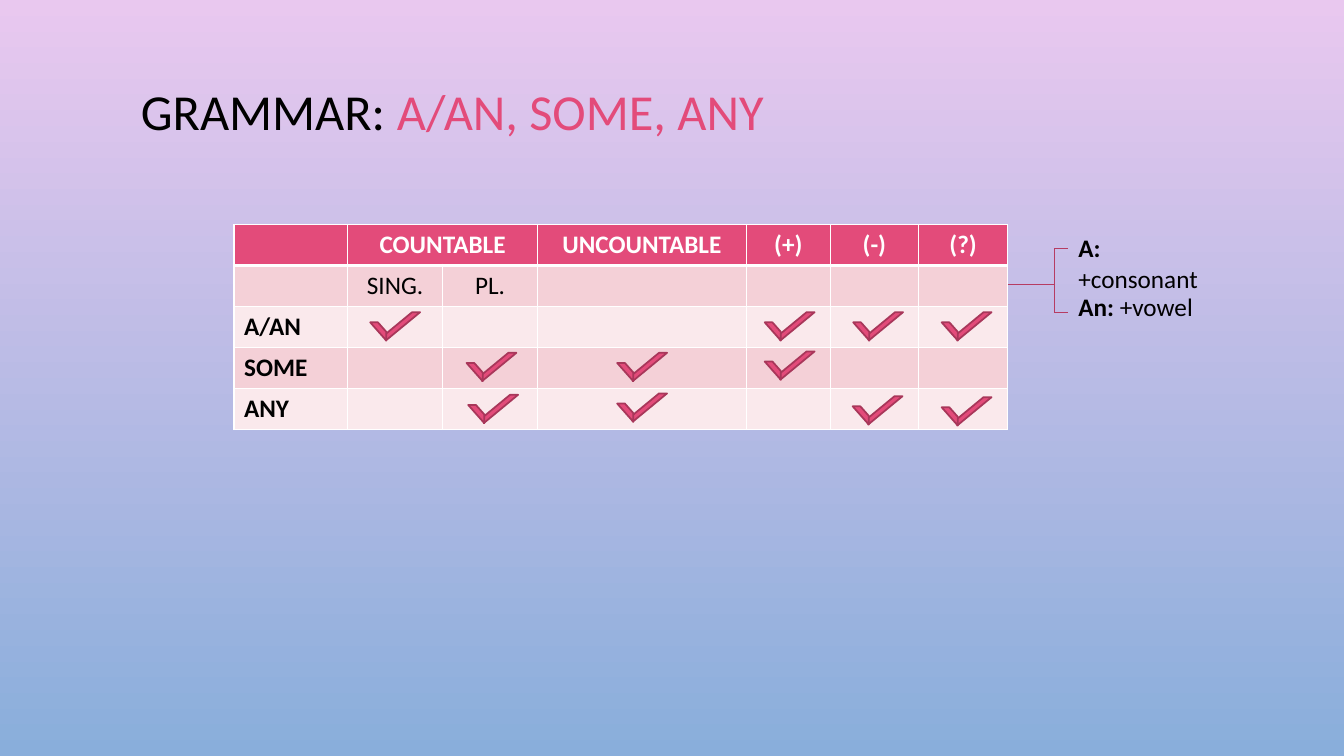
from lxml.etree import SubElement
from pptx import Presentation
from pptx.dml.color import RGBColor
from pptx.enum.shapes import MSO_CONNECTOR, MSO_SHAPE
from pptx.enum.text import PP_ALIGN
from pptx.oxml import parse_xml
from pptx.oxml.ns import nsdecls, qn
from pptx.util import Pt

PINK, DARK_PINK, BRACKET_PINK = "E34B7A", "A8375A", "B63C62"
ROSE, PALE_ROSE = "F4D0D7", "FAE9EC"
BLACK, WHITE = "000000", "FFFFFF"


def color(value):
    return RGBColor.from_string(value)


def add_run(paragraph, text, size, text_color, bold=False):
    run = paragraph.add_run()
    run.text = text
    font_format = {"name": "Calibri", "size": Pt(size), "bold": bold}
    for attribute, value in font_format.items():
        setattr(run.font, attribute, value)
    run.font.color.rgb = color(text_color)


presentation = Presentation()
presentation.slide_width, presentation.slide_height = Pt(960), Pt(540)
slide = presentation.slides.add_slide(presentation.slide_layouts[6])

# Background
background = slide.background.fill
background.gradient()
background.gradient_angle = 270
for stop, (position, stop_color) in zip(
    background.gradient_stops, [(0, "E9C8EF"), (1, "89AEDB")]
):
    stop.position = position
    stop.color.rgb = color(stop_color)

# Title
title = slide.shapes.add_textbox(Pt(93.6), Pt(58.3), Pt(818), Pt(53.3)).text_frame
title.word_wrap = True
heading = title.paragraphs[0]
heading.line_spacing = 0.9
add_run(heading, "GRAMMAR: ", 36, BLACK)
add_run(heading, "A/AN, SOME, ANY", 36, PINK)

# Grammar table
rows = [
    ["", "COUNTABLE", "", "UNCOUNTABLE", "(+)", "(-)", "(?)"],
    ["", "SING.", "PL.", "", "", "", ""],
    ["A/AN", "", "", "", "", "", ""],
    ["SOME", "", "", "", "", "", ""],
    ["ANY", "", "", "", "", "", ""],
]
column_widths = [81.2, 67.8, 67.8, 149.2, 60, 63, 63.8]
row_height = 29.25
grammar = slide.shapes.add_table(
    len(rows), len(column_widths), Pt(167.2), Pt(160.4),
    Pt(sum(column_widths)), Pt(row_height * len(rows)),
).table
grammar.first_row = grammar.horz_banding = False
for column, width in zip(grammar.columns, column_widths):
    column.width = Pt(width)
grammar.cell(0, 1).merge(grammar.cell(0, 2))

for row_index, row in enumerate(rows):
    grammar.rows[row_index].height = Pt(row_height)
    is_header = row_index == 0
    row_fill = PINK if is_header else (ROSE if row_index % 2 else PALE_ROSE)
    border_widths = {
        "L": 1, "R": 1,
        "T": 3 if row_index == 1 else 1,
        "B": 3 if is_header else 1,
    }
    for column_index, label in enumerate(row):
        cell = grammar.cell(row_index, column_index)
        cell.fill.solid()
        cell.fill.fore_color.rgb = color(row_fill)
        for order, (side, width) in enumerate(border_widths.items()):
            border = parse_xml(
                f'<a:ln{side} {nsdecls("a")} w="{Pt(width)}"><a:solidFill>'
                f'<a:srgbClr val="{WHITE}"/></a:solidFill></a:ln{side}>'
            )
            cell._tc.get_or_add_tcPr().insert(order, border)
        if label:
            paragraph = cell.text_frame.paragraphs[0]
            if column_index:
                paragraph.alignment = PP_ALIGN.CENTER
            add_run(paragraph, label, 18, WHITE if is_header else BLACK,
                    bold=row_index != 1)

# Check marks: a long stroke and a short one turned by 90 degrees
check_marks = [
    (275.6, 223), (557.4, 223), (620.6, 223), (683.8, 223),
    (344.4, 252), (452, 252), (557.4, 251),
    (345.6, 282), (452, 281), (620.2, 283), (683.8, 283.7),
]
strokes = [
    # offset x, offset y, width, height, rotation, stripe adjustment
    (0, 0, 24.5, 20.2, 0, 0.767),
    (-11.9, 8, 13, 11.5, 90, 0.524),
]
for left, top in check_marks:
    for offset_x, offset_y, width, height, rotation, thickness in strokes:
        stroke = slide.shapes.add_shape(
            MSO_SHAPE.DIAGONAL_STRIPE,
            Pt(left + offset_x), Pt(top + offset_y), Pt(width), Pt(height),
        )
        stroke.shadow.inherit = False
        stroke.rotation = rotation
        stroke.adjustments[0] = thickness
        stroke.fill.solid()
        stroke.fill.fore_color.rgb = color(PINK)
        stroke.line.color.rgb = color(DARK_PINK)
        stroke.line.width = Pt(1.25)

# Article rules beside the table
article_rules = [
    ("A:", " +consonant", 162.7, 115),
    ("An:", " +vowel", 204.5, 105),
]
rule_boxes = []
for article, sound, top, width in article_rules:
    rule_box = slide.shapes.add_textbox(Pt(763.2), Pt(top), Pt(width), Pt(29))
    rule_box.text_frame.word_wrap = True
    paragraph = rule_box.text_frame.paragraphs[0]
    add_run(paragraph, article, 18, BLACK, bold=True)
    add_run(paragraph, sound, 18, BLACK)
    rule_boxes.append(rule_box)

# Bracket from the table to the rules
bracket_lines = [
    (720, 203, 753.1, 203, None),
    (753.1, 177.2, 753.1, 223.2, None),
    (753.1, 177.2, 763.2, 177.2, rule_boxes[0]),
    (753.1, 223.2, 763.2, 223.2, None),
]
for *ends, target in bracket_lines:
    bracket_line = slide.shapes.add_connector(
        MSO_CONNECTOR.STRAIGHT, *[Pt(end) for end in ends]
    )
    if target is not None:
        bracket_line.end_connect(target, 1)
    bracket_line.line.color.rgb = color(BRACKET_PINK)
    bracket_line.line.width = Pt(0.75)
    SubElement(bracket_line._element.spPr, qn("a:effectLst"))

presentation.save("out.pptx")
